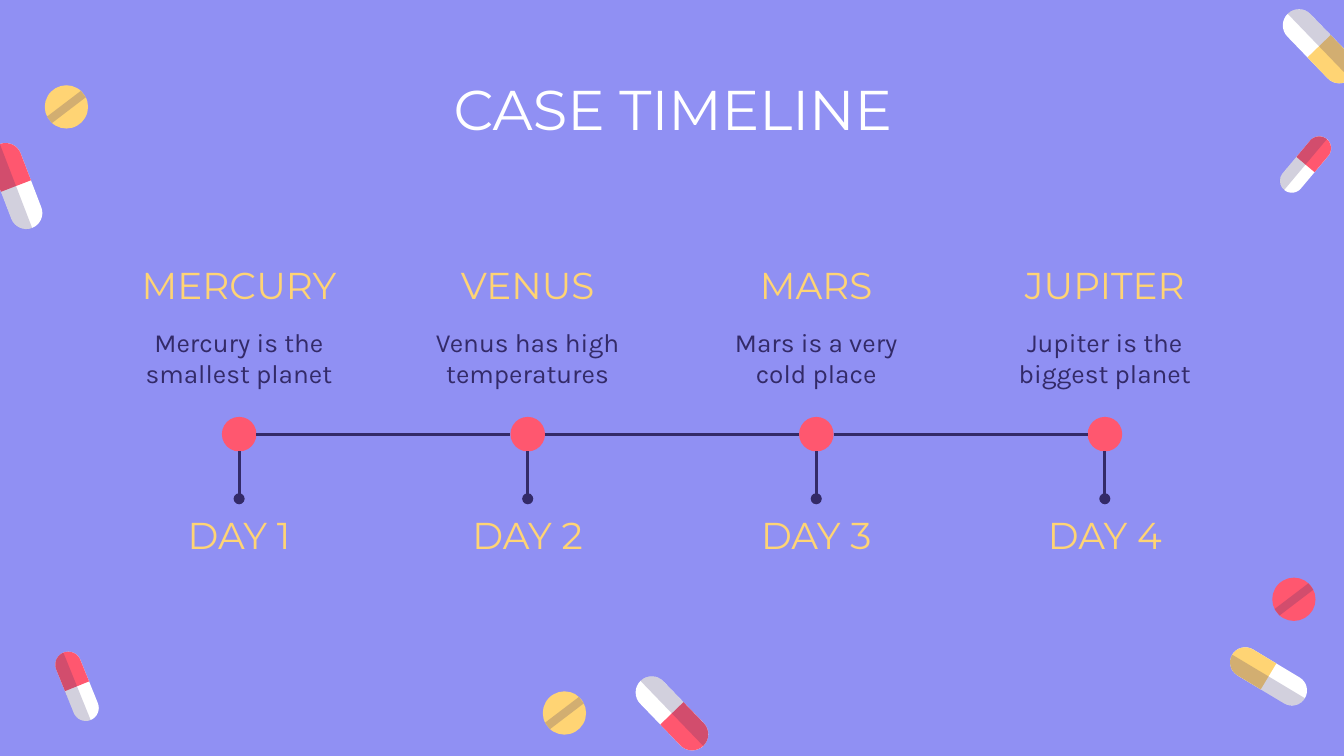
import math
from dataclasses import dataclass

from lxml import etree
from pptx import Presentation
from pptx.dml.color import RGBColor
from pptx.enum import shapes, text
from pptx.oxml import ns
from pptx.util import Pt


@dataclass(frozen=True)
class Theme:
    background: str = "9090F3"
    dark: str = "332A68"
    yellow: str = "FFD474"
    red: str = "FF576F"
    white: str = "FFFFFF"
    heading_font: str = "Montserrat"
    body_font: str = "Karla"
    title_size: int = 30
    heading_size: int = 20
    body_size: int = 14
    shade_opacity: int = 22


THEME = Theme()

STEPS = [
    ("MERCURY", "Mercury is the smallest planet", "DAY 1"),
    ("VENUS", "Venus has high temperatures", "DAY 2"),
    ("MARS", "Mars is a very cold place", "DAY 3"),
    ("JUPITER", "Jupiter is the biggest planet", "DAY 4"),
]
FIRST_CENTER, STEP_GAP = 128.1, 154.6
LABEL_WIDTH, LABEL_HEIGHT = 126.7, 38.9
LINE_Y, STEM_END, MARKER_SIZE = 232.6, 267.2, 18.5

# center x, center y, width, angle of the coloured end, colour
CAPSULES = [
    (679.6, 362.4, 16.2, 211, THEME.yellow),
    (699.4, 88.2, 12.7, -50, THEME.red),
    (41.3, 367.7, 13.9, 248, THEME.red),
    (360, 382.2, 17.3, 46, THEME.red),
    (8.6, 99.7, 17.2, 249, THEME.red),
    (706.7, 24.8, 17.3, 46, THEME.yellow),
]
CAPSULE_RATIO = 2.8

# center x, center y, colour
TABLETS = [
    (693.2, 321.1, THEME.red),
    (35.6, 57.3, THEME.yellow),
    (302.4, 382, THEME.yellow),
]
TABLET_SIZE, GROOVE_LENGTH, GROOVE_WIDTH, GROOVE_ANGLE = 23.2, 22.8, 4.4, -37.3


def paint(shape, color, opacity=100):
    shape.shadow.inherit = False
    shape.line.fill.background()
    shape.fill.solid()
    shape.fill.fore_color.rgb = RGBColor.from_string(color)
    if opacity < 100:
        color_element = shape.fill._xPr.find(".//" + ns.qn("a:srgbClr"))
        alpha = etree.SubElement(color_element, ns.qn("a:alpha"))
        alpha.set("val", str(opacity * 1000))


def arc(center, radius, start, end, segments=16):
    """Points on a circle around (center, 0), with angles in degrees."""
    angles = [math.radians(start + (end - start) * i / segments) for i in range(segments + 1)]
    return [(center + radius * math.cos(a), radius * math.sin(a)) for a in angles]


def add_outline(group, points, color, opacity=100):
    points = [(Pt(x), Pt(y)) for x, y in points]
    builder = group.shapes.build_freeform(*points[0], scale=1.0)
    builder.add_line_segments(points[1:], close=True)
    paint(builder.convert_to_shape(), color, opacity)


def add_capsule(slide, x, y, width, angle, color):
    """Draw a white capsule with one coloured end and one shaded long side."""
    group = slide.shapes.add_group_shape()
    radius = width / 2
    reach = radius * (CAPSULE_RATIO - 1)
    cosine, sine = math.cos(math.radians(angle)), math.sin(math.radians(angle))
    front = arc(reach, radius, -90, 90)
    outlines = [
        (front + arc(-reach, radius, 90, 270), THEME.white, 100),
        ([(0, -radius)] + front + [(0, radius)], color, 100),
        (arc(-reach, radius, 180, 270) + arc(reach, radius, -90, 0), THEME.dark,
         THEME.shade_opacity),
    ]
    for points, fill, opacity in outlines:
        turned = [(x + u * cosine - v * sine, y + u * sine + v * cosine) for u, v in points]
        add_outline(group, turned, fill, opacity)


def add_centered(container, kind, x, y, width, height):
    return container.shapes.add_shape(
        kind, Pt(x - width / 2), Pt(y - height / 2), Pt(width), Pt(height))


def add_tablet(slide, x, y, color):
    group = slide.shapes.add_group_shape()
    disc = add_centered(group, shapes.MSO_SHAPE.OVAL, x, y, TABLET_SIZE, TABLET_SIZE)
    paint(disc, color)
    groove = add_centered(
        group, shapes.MSO_SHAPE.RECTANGLE, x, y, GROOVE_LENGTH, GROOVE_WIDTH)
    groove.rotation = GROOVE_ANGLE
    paint(groove, THEME.dark, THEME.shade_opacity)


def write(shape, content, font, size, color):
    frame = shape.text_frame
    frame.word_wrap = True
    frame.auto_size = text.MSO_AUTO_SIZE.NONE
    frame.vertical_anchor = text.MSO_ANCHOR.MIDDLE
    frame.margin_left = frame.margin_right = frame.margin_top = frame.margin_bottom = Pt(7.2)
    frame.text = content
    paragraph = frame.paragraphs[0]
    paragraph.alignment = text.PP_ALIGN.CENTER
    paragraph.font.name = font
    paragraph.font.size = Pt(size)
    paragraph.font.color.rgb = RGBColor.from_string(color)


def add_title(slide, content):
    title = slide.shapes.title
    title.left, title.top, title.width, title.height = Pt(57), Pt(35.3), Pt(607), Pt(45.4)
    write(title, content, THEME.heading_font, THEME.title_size, THEME.white)


def add_label(slide, center, top, content, font, size, color):
    box = slide.shapes.add_textbox(
        Pt(center - LABEL_WIDTH / 2), Pt(top), Pt(LABEL_WIDTH), Pt(LABEL_HEIGHT))
    write(box, content, font, size, color)


def add_line(slide, x1, y1, x2, y2, oval_end=False):
    connector = slide.shapes.add_connector(
        shapes.MSO_CONNECTOR.STRAIGHT, Pt(x1), Pt(y1), Pt(x2), Pt(y2))
    connector.line.width = Pt(1.5)
    connector.line.color.rgb = RGBColor.from_string(THEME.dark)
    if oval_end:
        tail = etree.SubElement(connector.line._get_or_add_ln(), ns.qn("a:tailEnd"))
        tail.set("type", "oval")
    etree.SubElement(connector._element.spPr, ns.qn("a:effectLst"))


def add_step(slide, center, name, description, day):
    heading = (THEME.heading_font, THEME.heading_size, THEME.yellow)
    add_label(slide, center, 133.2, name, *heading)
    add_label(slide, center, 172.1, description, THEME.body_font, THEME.body_size, THEME.dark)
    add_label(slide, center, 267.1, day, *heading)
    marker = add_centered(
        slide, shapes.MSO_SHAPE.OVAL, center, LINE_Y, MARKER_SIZE, MARKER_SIZE)
    paint(marker, THEME.red)
    add_line(slide, center, LINE_Y + MARKER_SIZE / 2, center, STEM_END, oval_end=True)


def main():
    presentation = Presentation()
    presentation.slide_width, presentation.slide_height = Pt(720), Pt(405)
    slide = presentation.slides.add_slide(presentation.slide_layouts[5])
    slide.background.fill.solid()
    slide.background.fill.fore_color.rgb = RGBColor.from_string(THEME.background)

    for capsule in CAPSULES:
        add_capsule(slide, *capsule)
    for tablet in TABLETS:
        add_tablet(slide, *tablet)

    add_title(slide, "CASE TIMELINE")
    centers = [FIRST_CENTER + STEP_GAP * i for i in range(len(STEPS))]
    for center, step in zip(centers, STEPS):
        add_step(slide, center, *step)
    for start, end in zip(centers, centers[1:]):
        add_line(slide, start + MARKER_SIZE / 2, LINE_Y, end - MARKER_SIZE / 2, LINE_Y)

    presentation.save("out.pptx")


if __name__ == "__main__":
    main()
